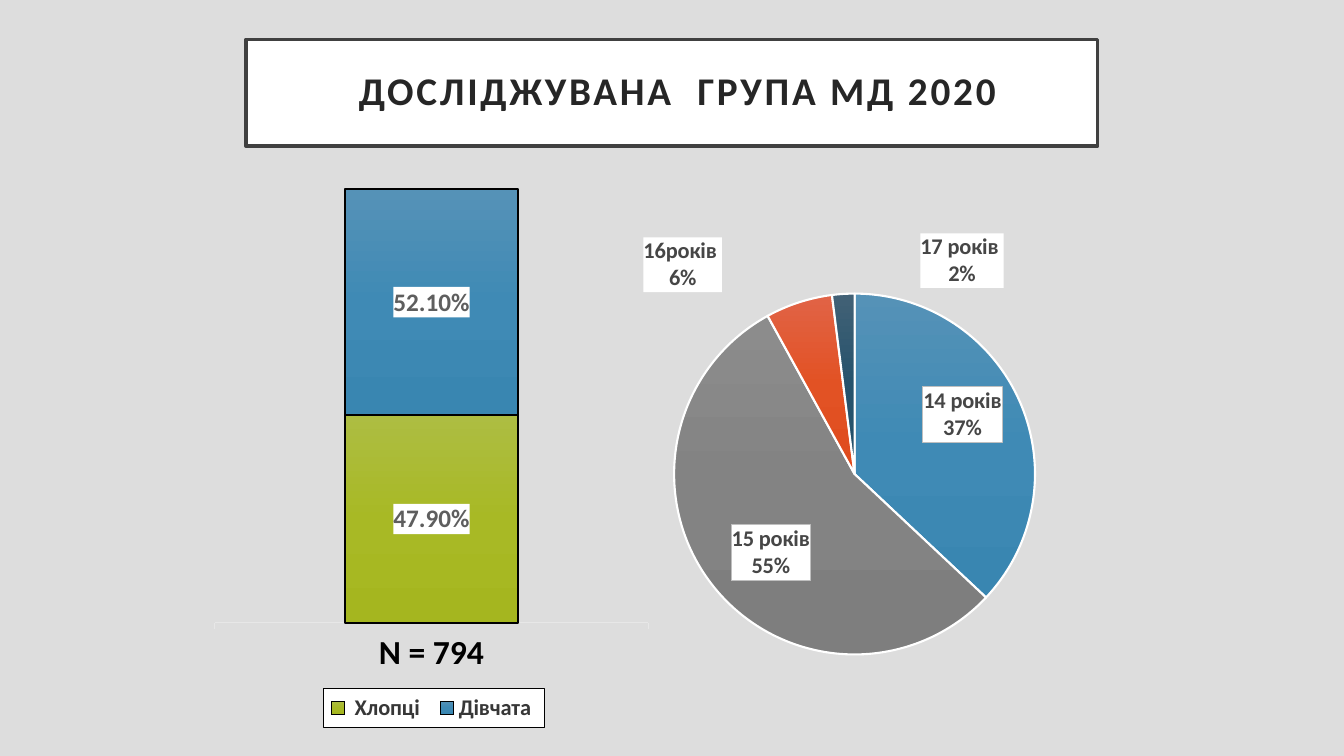
"""Builds the study group slide with a sex split column and an age pie."""
from copy import deepcopy

from pptx import Presentation
from pptx.chart.data import CategoryChartData
from pptx.dml.color import RGBColor
from pptx.enum.chart import XL_CHART_TYPE, XL_LABEL_POSITION, XL_LEGEND_POSITION, XL_TICK_MARK
from pptx.enum.text import MSO_ANCHOR, PP_ALIGN
from pptx.oxml import parse_xml
from pptx.oxml.ns import nsdecls, qn
from pptx.util import Pt

PIE, STACKED = XL_CHART_TYPE.PIE, XL_CHART_TYPE.COLUMN_STACKED_100
CENTER, OUTSIDE = XL_LABEL_POSITION.CENTER, XL_LABEL_POSITION.OUTSIDE_END
BOTTOM = XL_LEGEND_POSITION.BOTTOM
TICK_OUT, TICK_NONE = XL_TICK_MARK.OUTSIDE, XL_TICK_MARK.NONE
MIDDLE, CENTERED = MSO_ANCHOR.MIDDLE, PP_ALIGN.CENTER

FONT = "Calibri"
COLORS = {
    "background": "DDDDDD", "white": "FFFFFF", "black": "000000",
    "title": "262626", "frame": "404040", "axis": "E7E7E7",
    "legend": "373737", "age": "464646", "share": "5E5E5E", "border": "BFBFBF",
}
BLUE = ("5592B7", "3F8AB5", "3986B1")
GRAY = ("8C8C8C", "838383", "7E7E7E")
ORANGE = ("E16346", "E25224", "DF4B1D")
NAVY = ("426176", "26536C", "22506A")
GREEN = ("ADBD42", "A8B925", "A5B61F")

TITLE_RUNS = [(" ", False), ("ДОСЛІДЖУВАНА  ГРУПА MД 2020", True)]
TITLE_BOX = (175.7, 28.1, 608.4, 76.3)

AGES = [
    ("14 років", 37, BLUE, "ctr", (0.04, -0.05), "border"),
    ("15 років", 55, GRAY, "ctr", (-0.02, 0.05), "border"),
    ("16років ", 6, ORANGE, "outEnd", (-0.12, -0.01), None),
    ("17 років ", 2, NAVY, "outEnd", (0.19, 0), None),
]
AGE_BOX = (391, 156.2, 447.8, 334.8)
AGE_PLOT = (0.2, 0.16, 0.58, 0.77)

GROUP_SIZE = "N = 794"
SEXES = [(" Хлопці ", 0.479, GREEN), ("Дівчата ", 0.521, BLUE)]
SEX_BOX = (146.9, 127.4, 322.6, 392.4)
SEX_PLOT = (0.02, 0.02, 0.96, 0.79)
LEGEND_AREA = (0.26, 0.93, 0.49, 0.07)


def rgb(name):
    return RGBColor.from_string(COLORS.get(name, name))


def style(font, size, color, bold=True):
    font.name, font.size, font.bold = FONT, Pt(size), bold
    font.color.rgb = rgb(color)


def outline(line, color, width):
    line.color.rgb = rgb(color)
    line.width = Pt(width)


def shade(fill, tones):
    fill.gradient()
    fill.gradient_angle = 270
    first = fill.gradient_stops[0]._gs
    first.addnext(deepcopy(first))
    for stop, position, tone in zip(fill.gradient_stops, (0, 0.5, 1), tones):
        stop.position = position
        stop.color.rgb = rgb(tone)


def layout(values, area=True):
    keys = ("x", "y", "w", "h")
    modes = '<c:xMode val="edge"/><c:yMode val="edge"/>' if area else ""
    target = '<c:layoutTarget val="inner"/>' if area == "plot" else ""
    sizes = "".join(f'<c:{key} val="{value}"/>' for key, value in zip(keys, values))
    return parse_xml(f'<c:layout {nsdecls("c")}><c:manualLayout>{target}{modes}{sizes}'
                     "</c:manualLayout></c:layout>")


def panel(border=None):
    stroke = f'<a:solidFill><a:srgbClr val="{COLORS[border]}"/></a:solidFill>' if border else "<a:noFill/>"
    return parse_xml(f'<c:spPr {nsdecls("c", "a")}><a:solidFill><a:srgbClr val="{COLORS["white"]}"/>'
                     f'</a:solidFill><a:ln w="9525">{stroke}</a:ln></c:spPr>')


def add_chart(slide, kind, box, plot_area, categories, columns):
    data = CategoryChartData()
    data.categories = categories
    for name, values in columns:
        data.add_series(name, values)
    chart = slide.shapes.add_chart(kind, *map(Pt, box), data).chart
    chart.has_title = chart.has_legend = False
    style(chart.font, 10, "black", False)
    area = chart._chartSpace.find(".//" + qn("c:plotArea"))
    for old in area.findall(qn("c:layout")):
        area.remove(old)
    area.insert(0, layout(plot_area, "plot"))
    return chart


def label_series(series, size, color, position):
    labels = series.data_labels
    style(labels.font, size, color)
    labels.position = position
    element = labels._element
    element.find(qn("c:txPr")).addprevious(panel())
    return labels


def age_label(index, place, offset, border, text_style):
    label = parse_xml(
        f'<c:dLbl {nsdecls("c")}><c:idx val="{index}"/><c:dLblPos val="{place}"/>'
        '<c:showLegendKey val="0"/><c:showVal val="0"/><c:showCatName val="1"/>'
        '<c:showSerName val="0"/><c:showPercent val="1"/><c:showBubbleSize val="0"/>'
        "<c:separator>\n</c:separator></c:dLbl>")
    parts = (layout(offset, False), panel(border), deepcopy(text_style))
    for order, part in enumerate(parts, 1):
        label.insert(order, part)
    return label


def add_title(slide):
    title = slide.shapes.title
    title.left, title.top, title.width, title.height = map(Pt, TITLE_BOX)
    title.fill.solid()
    title.fill.fore_color.rgb = rgb("white")
    outline(title.line, "frame", 2.5)
    frame = title.text_frame
    frame.word_wrap = True
    frame.vertical_anchor = MIDDLE
    frame.margin_left = frame.margin_right = frame.margin_top = frame.margin_bottom = Pt(14.4)
    paragraph = frame.paragraphs[0]
    paragraph.alignment = CENTERED
    paragraph.line_spacing = 0.9
    for text, bold in TITLE_RUNS:
        run = paragraph.add_run()
        run.text = text
        style(run.font, 28, "title", bold)
        run._r.get_or_add_rPr().set("spc", "200")


def add_age_pie(slide):
    chart = add_chart(slide, PIE, AGE_BOX, AGE_PLOT, [age[0] for age in AGES],
                      [("Series 1", [age[1] for age in AGES])])
    plot = chart.plots[0]
    plot.vary_by_categories = True
    series = plot.series[0]
    labels = label_series(series, 16, "age", OUTSIDE)
    labels.show_value = False
    labels.show_percentage = labels.show_category_name = True
    element = labels._element
    for leader in element.findall(qn("c:showLeaderLines")):
        leader.set("val", "0")
    text_style = element.find(qn("c:txPr"))
    for index, (_, _, tones, place, offset, border) in enumerate(AGES):
        slice_format = series.points[index].format
        shade(slice_format.fill, tones)
        outline(slice_format.line, "white", 1.5)
        element.insert(index, age_label(index, place, offset, border, text_style))


def add_sex_column(slide):
    chart = add_chart(slide, STACKED, SEX_BOX, SEX_PLOT, [GROUP_SIZE],
                      [(name, [share]) for name, share, _ in SEXES])
    plot = chart.plots[0]
    plot.vary_by_categories = False
    plot.gap_width, plot.overlap = 150, 100
    for series, (_, _, tones) in zip(plot.series, SEXES):
        series.invert_if_negative = False
        shade(series.format.fill, tones)
        outline(series.format.line, "black", 1.5)
        labels = label_series(series, 18, "share", CENTER)
        labels.show_value = True
        labels.number_format, labels.number_format_is_linked = "0.00%", False
    groups, shares = chart.category_axis, chart.value_axis
    groups.major_tick_mark, groups.minor_tick_mark = TICK_OUT, TICK_NONE
    outline(groups.format.line, "axis", 0.75)
    style(groups.tick_labels.font, 24, "black")
    shares.visible = shares.has_major_gridlines = False
    shares.tick_labels.number_format = "0.00%"
    shares.tick_labels.number_format_is_linked = False
    chart.has_legend = True
    legend = chart.legend
    legend.position = BOTTOM
    legend.include_in_layout = False
    style(legend.font, 16, "legend")
    overlay = legend._element.find(qn("c:overlay"))
    overlay.addprevious(layout(LEGEND_AREA))
    overlay.addnext(panel("black"))


def main():
    deck = Presentation()
    deck.slide_width, deck.slide_height = Pt(960), Pt(540)
    slide = deck.slides.add_slide(deck.slide_layouts[5])
    slide.background.fill.solid()
    slide.background.fill.fore_color.rgb = rgb("background")
    add_title(slide)
    add_age_pie(slide)
    add_sex_column(slide)
    deck.save("out.pptx")


if __name__ == "__main__":
    main()
